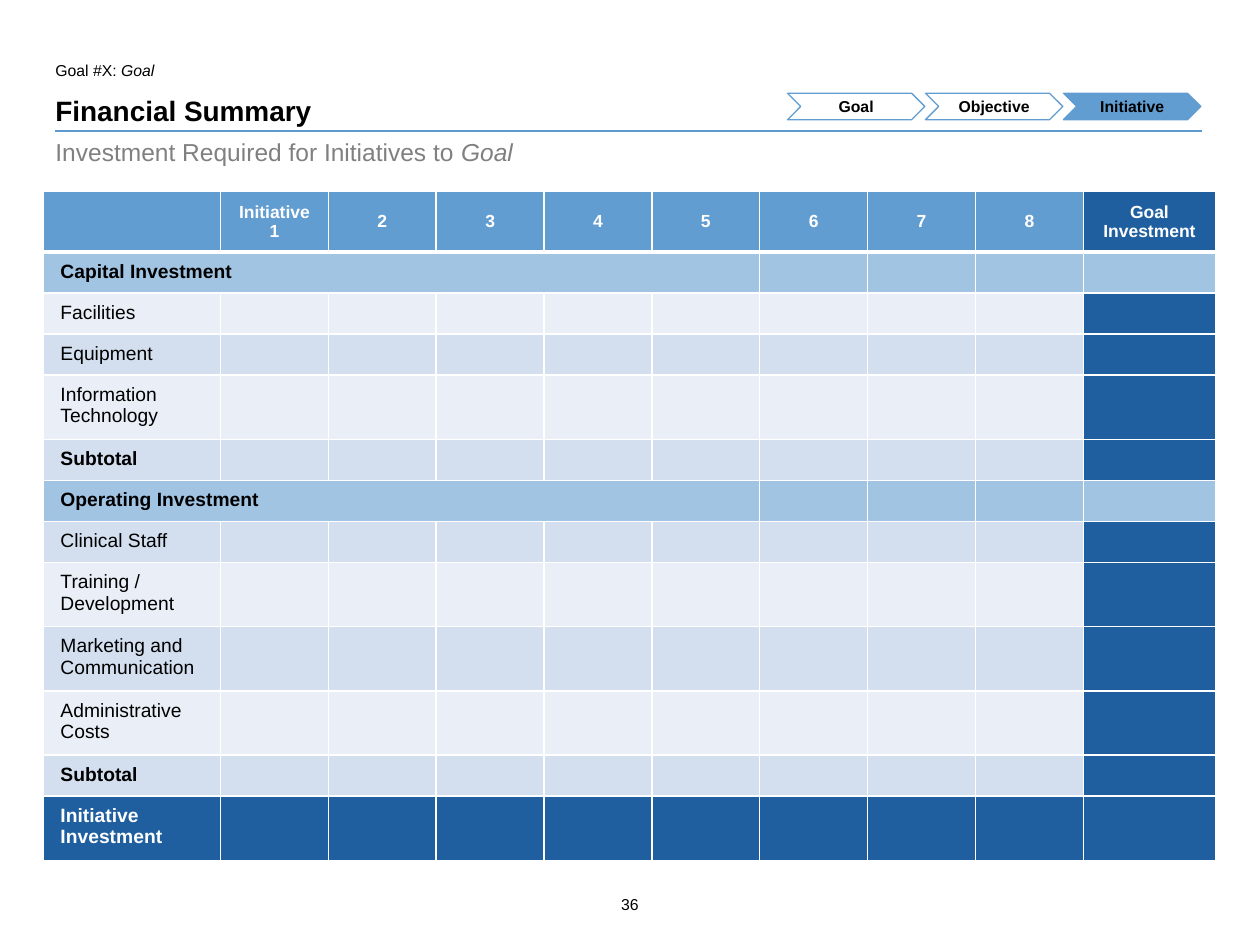
from lxml.etree import SubElement
from pptx import Presentation
from pptx.dml.color import RGBColor
from pptx.enum.shapes import MSO_CONNECTOR, MSO_SHAPE
from pptx.enum.text import MSO_ANCHOR, PP_ALIGN
from pptx.oxml import parse_xml
from pptx.oxml.ns import nsdecls, qn
from pptx.util import Inches, Pt

BLACK, WHITE, GREY = "000000", "FFFFFF", "808080"
BLUE, DARK, BAND = "629DD1", "1F5FA0", "A1C4E3"
PALE, SOFT = "EAEFF7", "D3DFEE"

LEFT, TOP, WIDTH, HEIGHT = 0.34, 1.52, 9.31, 5.31
FIRST, LAST, HEAD, TALL = 1.41, 1.05, 0.48, 0.51
HEADS = ["", "Initiative 1", *"2345678", "Goal Investment"]
ROWS = [
    # label, fill, bold, two lines
    ("Capital Investment", BAND, True, False),
    ("Facilities", PALE, False, False),
    ("Equipment", SOFT, False, False),
    ("Information Technology", PALE, False, True),
    ("Subtotal", SOFT, True, False),
    ("Operating Investment", BAND, True, False),
    ("Clinical Staff", SOFT, False, False),
    ("Training / Development", PALE, False, True),
    ("Marketing and Communication", SOFT, False, True),
    ("Administrative Costs", PALE, False, True),
    ("Subtotal", SOFT, True, False),
    ("Initiative Investment", DARK, True, True),
]


def color(code):
    return RGBColor.from_string(code)


def pad(item, side, end):
    """Set the inner margins of a text frame or a table cell."""
    item.margin_left = item.margin_right = Inches(side)
    item.margin_top = item.margin_bottom = Inches(end)


class Deck:
    """Holds the font and the slide being drawn."""

    def __init__(self, slide, font="Arial"):
        self.slide, self.font = slide, font

    def style(self, par, size, code, bold=False):
        for run in par.runs:
            font = run.font
            font.name, font.size, font.bold = self.font, Pt(size), bold
            font.color.rgb = color(code)

    def text(self, box, words, size, code=BLACK, bold=False, slant="",
             align=PP_ALIGN.LEFT, anchor=MSO_ANCHOR.TOP, inset=(0, 0.04)):
        """Add a text box; slant is an italic ending."""
        shape = self.slide.shapes.add_textbox(*map(Inches, box))
        frame = shape.text_frame
        frame.word_wrap, frame.vertical_anchor = True, anchor
        pad(frame, *inset)
        par = frame.paragraphs[0]
        par.text, par.alignment = words, align
        if slant:
            run = par.add_run()
            run.text, run.font.italic = slant, True
        self.style(par, size, code, bold)

    def line(self, start, end, code, width):
        points = map(Inches, (*start, *end))
        line = self.slide.shapes.add_connector(MSO_CONNECTOR.STRAIGHT, *points)
        line.line.color.rgb, line.line.width = color(code), Pt(width)
        SubElement(line._element.spPr, qn("a:effectLst"))

    def step(self, box, words, filled):
        shape = self.slide.shapes.add_shape(MSO_SHAPE.CHEVRON, *map(Inches, box))
        shape.shadow.inherit = False
        if filled:
            shape.fill.solid()
            shape.fill.fore_color.rgb = color(BLUE)
        else:
            shape.fill.background()
        shape.line.color.rgb, shape.line.width = color(BLUE), Pt(0.75)
        frame = shape.text_frame
        frame.text, frame.word_wrap = words, False
        frame.vertical_anchor = MSO_ANCHOR.MIDDLE
        pad(frame, 0.14, 0.07)
        par = frame.paragraphs[0]
        par.alignment = PP_ALIGN.CENTER
        self.style(par, 9, BLACK, True)

    def table(self, box, cols, rows):
        shape = self.slide.shapes.add_table(len(rows), len(cols), *map(Inches, box))
        table = shape.table
        for col, width in zip(table.columns, cols):
            col.width = Inches(width)
        for row, height in zip(table.rows, rows):
            row.height = Inches(height)
        return table

    def cell(self, cell, words, fill, size, code, bold, top=1, bottom=1):
        cell.fill.solid()
        cell.fill.fore_color.rgb = color(fill)
        pad(cell, 0.14, 0.07)
        par = cell.text_frame.paragraphs[0]
        if words:
            par.text = words
            self.style(par, size, code, bold)
        else:
            par._p.get_or_add_endParaRPr().set("sz", str(size * 100))
        self.edge(cell, top, bottom)

    def edge(self, cell, top, bottom):
        """Give a cell white borders, with widths in points."""
        props = cell._tc.get_or_add_tcPr()
        for spot, (side, width) in enumerate(zip("LRTB", (1, 1, top, bottom))):
            props.insert(spot, parse_xml(
                f'<a:ln{side} {nsdecls("a")} w="{Pt(width)}"><a:solidFill>'
                f'<a:srgbClr val="{WHITE}"/></a:solidFill></a:ln{side}>'))


def fill_table(deck):
    count = len(HEADS)
    mid = (WIDTH - FIRST - LAST) / (count - 2)
    tall = sum(row[3] for row in ROWS)
    short = (HEIGHT - HEAD - tall * TALL) / (len(ROWS) - tall)
    cols = [FIRST] + [mid] * (count - 2) + [LAST]
    rows = [HEAD] + [TALL if row[3] else short for row in ROWS]
    table = deck.table((LEFT, TOP, WIDTH, HEIGHT), cols, rows)

    for col, words in enumerate(HEADS):
        cell = table.cell(0, col)
        fill = DARK if col == count - 1 else BLUE
        deck.cell(cell, words, fill, 10, WHITE, True, bottom=3)
        cell.vertical_anchor = MSO_ANCHOR.MIDDLE
        cell.text_frame.paragraphs[0].alignment = PP_ALIGN.CENTER

    for row, (label, fill, bold, _) in enumerate(ROWS, 1):
        code = WHITE if fill == DARK else BLACK
        for col in range(count):
            total = col == count - 1 and fill != BAND
            deck.cell(table.cell(row, col), "" if col else label,
                      DARK if total else fill, 11, code, bold,
                      top=3 if row == 1 else 1)
        if fill == BAND:
            table.cell(row, 0).merge(table.cell(row, 5))


def main():
    show = Presentation()
    show.slide_width, show.slide_height = Inches(10), Inches(7.5)
    deck = Deck(show.slides.add_slide(show.slide_layouts[6]))

    deck.line((0.44, 1.04), (9.54, 1.04), "5D9ACF", 0.75)
    deck.text((4.66, 7.06, 0.68, 0.26), "36", 9, align=PP_ALIGN.CENTER,
              inset=(0.04, 0.04))
    deck.text((0.44, 0.44, 2.89, 0.2), "Goal #X: ", 9, slant="Goal")
    deck.text((0.44, 0.74, 5.7, 0.27), "Financial Summary", 16, bold=True,
              anchor=MSO_ANCHOR.BOTTOM, inset=(0, 0))
    fill_table(deck)
    deck.text((0.44, 1.05, 9.09, 0.3), "Investment Required for Initiatives to ",
              14, GREY, slant="Goal")
    for spot, words in enumerate(("Goal", "Objective", "Initiative")):
        deck.step((6.25 + spot * 1.095, 0.74, 1.09, 0.21), words,
                  words == "Initiative")
    show.save("out.pptx")


if __name__ == "__main__":
    main()
